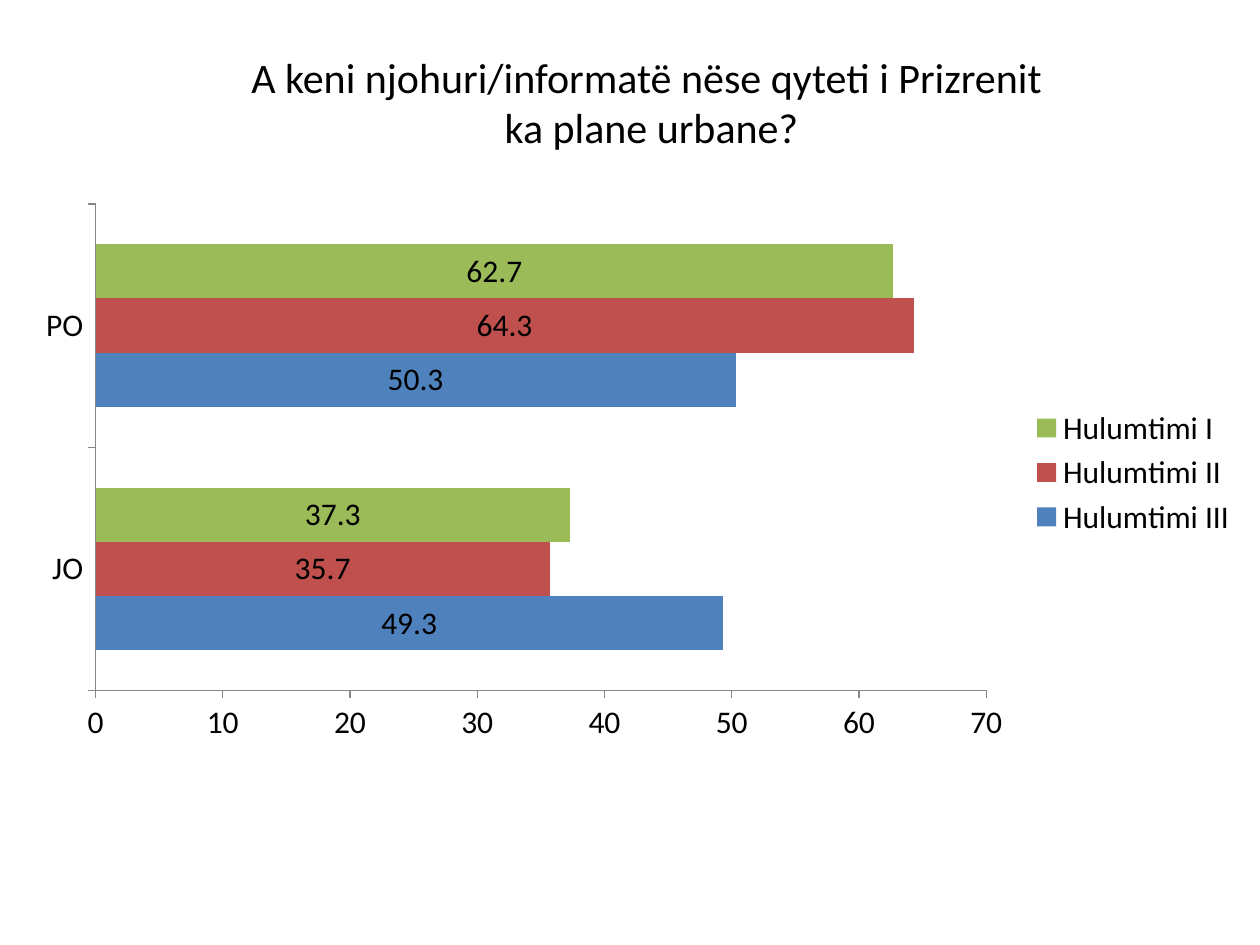
"""Build a survey slide with a title and a clustered bar chart."""
from dataclasses import dataclass

from pptx import Presentation
from pptx.chart.data import CategoryChartData
from pptx.dml.color import RGBColor
from pptx.enum.chart import XL_CHART_TYPE, XL_LABEL_POSITION, XL_LEGEND_POSITION, XL_TICK_MARK
from pptx.enum.text import MSO_ANCHOR, PP_ALIGN
from pptx.util import Inches, Pt

BAR_CLUSTERED = XL_CHART_TYPE.BAR_CLUSTERED
LABEL_CENTER = XL_LABEL_POSITION.CENTER
LEGEND_RIGHT = XL_LEGEND_POSITION.RIGHT
TICK_OUTSIDE = XL_TICK_MARK.OUTSIDE
MIDDLE = MSO_ANCHOR.MIDDLE
CENTER = PP_ALIGN.CENTER

BLACK = RGBColor(0x00, 0x00, 0x00)
GRAY = RGBColor(0x86, 0x86, 0x86)
BLUE = RGBColor(0x4F, 0x81, 0xBD)
RED = RGBColor(0xC0, 0x50, 0x4D)
GREEN = RGBColor(0x9B, 0xBB, 0x59)
FONT = "Calibri"


@dataclass(frozen=True)
class Survey:
    name: str
    values: tuple[float, float]
    color: RGBColor


ANSWERS = ("JO", "PO")
SURVEYS = (
    Survey("Hulumtimi III", (49.3, 50.3), BLUE),
    Survey("Hulumtimi II", (35.7, 64.3), RED),
    Survey("Hulumtimi I", (37.3, 62.7), GREEN),
)
QUESTION = ("A keni njohuri/informatë nëse qyteti i Prizrenit ", "ka plane urbane?")


def style_font(font, size: int) -> None:
    font.name = FONT
    font.size = Pt(size)
    font.color.rgb = BLACK


def write_title(page) -> None:
    box = page.shapes.title
    box.left, box.top, box.width, box.height = map(Inches, (0.92, 0, 8.5, 1.61))
    box.text_frame.vertical_anchor = MIDDLE
    para = box.text_frame.paragraphs[0]
    para.alignment = CENTER
    for index, line in enumerate(QUESTION):
        if index:
            para.add_line_break()
        span = para.add_run()
        span.text = line
        style_font(span.font, 24)


def draw_chart(page) -> None:
    data = CategoryChartData()
    data.categories = ANSWERS
    for survey in SURVEYS:
        data.add_series(survey.name, survey.values)
    frame = page.shapes.add_chart(
        BAR_CLUSTERED, *map(Inches, (0.17, 1.53, 9.75, 4.44)), data)
    chart = frame.chart
    chart.has_title = False
    style_font(chart.font, 18)
    chart.has_legend = True
    chart.legend.position = LEGEND_RIGHT
    chart.legend.include_in_layout = False

    for axis in (chart.category_axis, chart.value_axis):
        axis.has_major_gridlines = False
        axis.major_tick_mark = TICK_OUTSIDE
        axis.format.line.color.rgb = GRAY
        axis.format.line.width = Pt(0.75)
    chart.value_axis.minimum_scale = 0
    chart.value_axis.maximum_scale = 70
    chart.value_axis.major_unit = 10

    plot = chart.plots[0]
    plot.gap_width = 150
    plot.vary_by_categories = False
    for series, survey in zip(plot.series, SURVEYS):
        series.format.fill.solid()
        series.format.fill.fore_color.rgb = survey.color
        labels = series.data_labels
        labels.show_value = True
        labels.position = LABEL_CENTER
        style_font(labels.font, 18)


def main() -> None:
    deck = Presentation()
    deck.slide_width, deck.slide_height = Inches(10), Inches(7.5)
    page = deck.slides.add_slide(deck.slide_layouts[0])
    subtitle = page.placeholders[1].element
    subtitle.getparent().remove(subtitle)
    write_title(page)
    draw_chart(page)
    deck.save("out.pptx")


if __name__ == "__main__":
    main()
